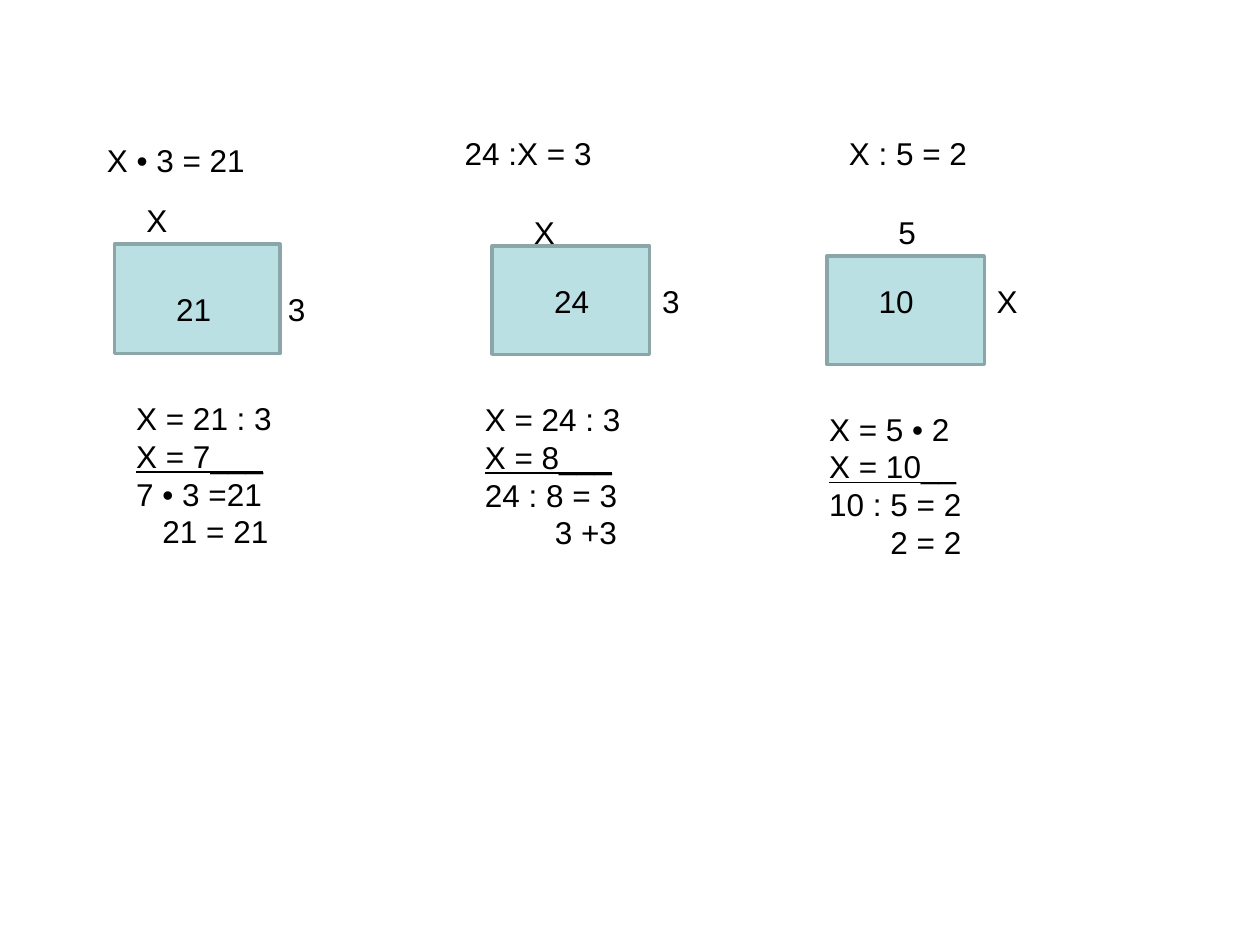
from dataclasses import dataclass

from pptx import Presentation
from pptx.dml.color import RGBColor
from pptx.enum.shapes import MSO_SHAPE
from pptx.enum.text import MSO_AUTO_SIZE
from pptx.util import Pt

RECTANGLE = MSO_SHAPE.RECTANGLE
GROW = MSO_AUTO_SIZE.SHAPE_TO_FIT_TEXT

BLACK = RGBColor(0x00, 0x00, 0x00)
PALE_TEAL = RGBColor(0xBB, 0xE0, 0xE3)
GREY_TEAL = RGBColor(0x8A, 0xA6, 0xA8)

FONT = "Arial"
FONT_SIZE = 18
LABEL_HEIGHT = 29


@dataclass(frozen=True)
class Box:
    left: float
    top: float
    width: float
    height: float = LABEL_HEIGHT


@dataclass(frozen=True)
class Line:
    text: str
    underline: bool = False
    indent: float = 0


@dataclass(frozen=True)
class Label:
    box: Box
    lines: tuple[Line, ...]


@dataclass(frozen=True)
class Problem:
    """One equation with its area model and worked solution."""
    rectangle: Box
    equation: Label
    top_side: Label
    right_side: Label
    area: Label
    solution: Label


def label(text: str, left: float, top: float, width: float) -> Label:
    return Label(Box(left, top, width), (Line(text),))


def solution(box: Box, step: str, answer: str, check: str,
             result: str, indent: float) -> Label:
    return Label(box, (Line(step), Line(answer, underline=True),
                       Line(check), Line(result, indent=indent)))


PROBLEMS = (
    Problem(
        Box(65.5, 139.5, 94.5, 62.5),
        label("Х • 3 = 21", 54, 77.25, 142),
        label("Х", 76.5, 111.5, 39.5),
        label("3", 157.5, 162, 55.5),
        label("21", 93.5, 162, 45.5),
        solution(Box(70.75, 224.5, 102, 94.5),
                 "Х = 21 : 3", "Х = 7___", "7 • 3 =21", "21 = 21", 15),
    ),
    Problem(
        Box(281.25, 140.5, 90, 62),
        label("24 :Х = 3", 258.5, 73.25, 174),
        label("Х", 298, 118.25, 39.5),
        label("3", 371.25, 157.5, 28),
        label("24", 309.5, 157.5, 39.5),
        solution(Box(270, 225, 106.5, 94.5),
                 "Х = 24 : 3", "Х = 8___", "24 : 8 = 3", "3 +3", 40),
    ),
    Problem(
        Box(472.5, 146.25, 90, 62),
        label("Х : 5 = 2", 478, 73.25, 180),
        label("5", 506.25, 118.25, 39.5),
        label("Х", 562.5, 157.5, 28),
        label("10", 495, 157.5, 56),
        solution(Box(466.75, 230.5, 129.5, 116.5),
                 "Х = 5 • 2", "Х = 10__", "10 : 5 = 2", "2 = 2", 35),
    ),
)


def place(box: Box) -> tuple[Pt, Pt, Pt, Pt]:
    return Pt(box.left), Pt(box.top), Pt(box.width), Pt(box.height)


def draw_rectangle(shapes, box: Box) -> None:
    sp = shapes.add_shape(RECTANGLE, *place(box))
    sp.shadow.inherit = False
    sp.fill.solid()
    sp.fill.fore_color.rgb = PALE_TEAL
    sp.line.color.rgb = GREY_TEAL
    sp.line.width = Pt(2)


def draw_label(shapes, item: Label) -> None:
    tf = shapes.add_textbox(*place(item.box)).text_frame
    tf.word_wrap = True
    tf.auto_size = GROW
    for i, line in enumerate(item.lines):
        p = tf.add_paragraph() if i else tf.paragraphs[0]
        if line.indent:
            pPr = p._p.get_or_add_pPr()
            pPr.set("marL", str(Pt(line.indent)))
            pPr.set("indent", "0")
        r = p.add_run()
        r.text = line.text
        r.font.name = FONT
        r.font.size = Pt(FONT_SIZE)
        r.font.color.rgb = BLACK
        if line.underline:
            r.font.underline = True


def draw_problem(shapes, problem: Problem) -> None:
    draw_rectangle(shapes, problem.rectangle)
    for item in (problem.equation, problem.top_side, problem.right_side,
                 problem.area, problem.solution):
        draw_label(shapes, item)


def main() -> None:
    prs = Presentation()
    prs.slide_width = Pt(720)
    prs.slide_height = Pt(540)
    s = prs.slides.add_slide(prs.slide_layouts[6])
    for problem in PROBLEMS:
        draw_problem(s.shapes, problem)
    prs.save("out.pptx")


if __name__ == "__main__":
    main()
